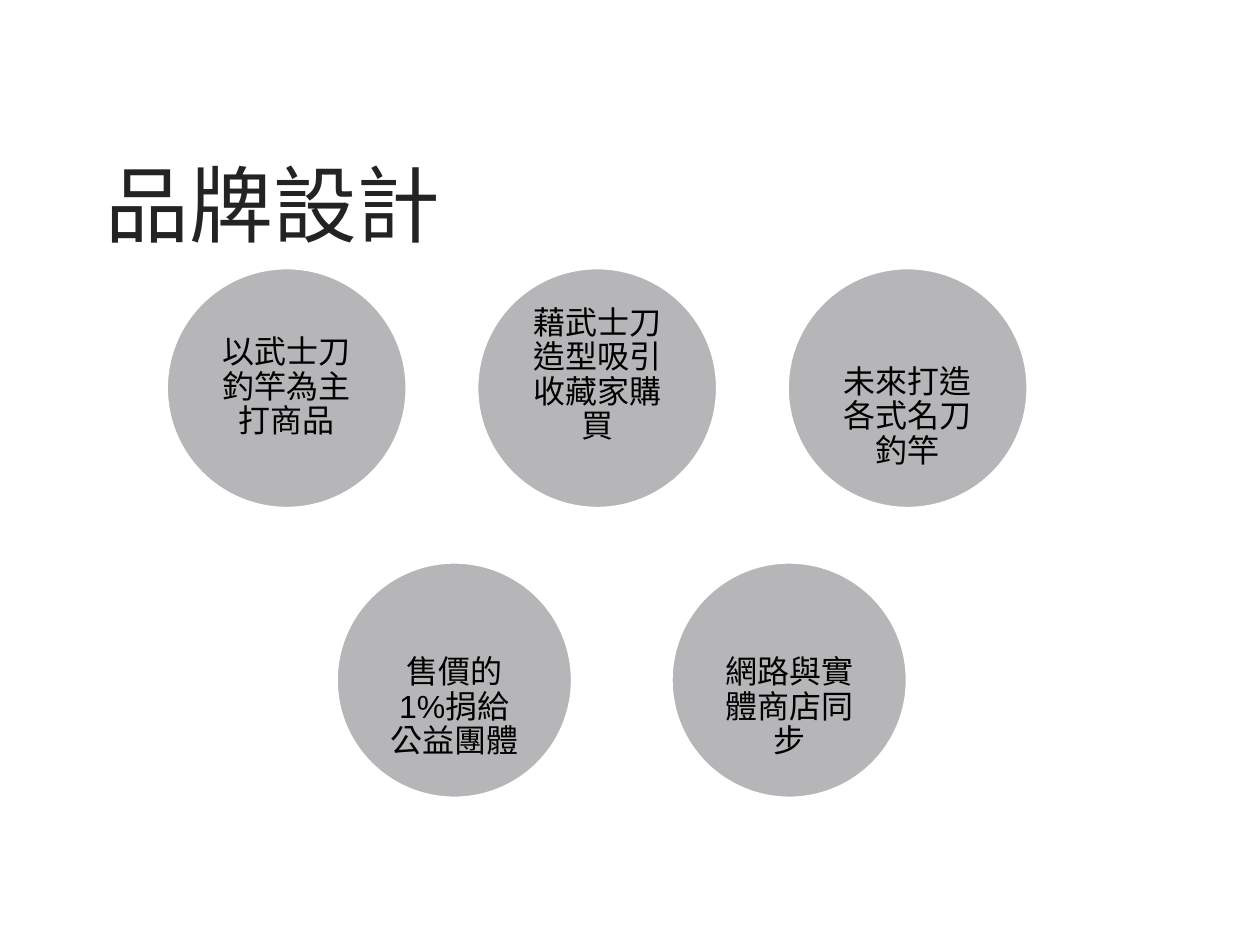
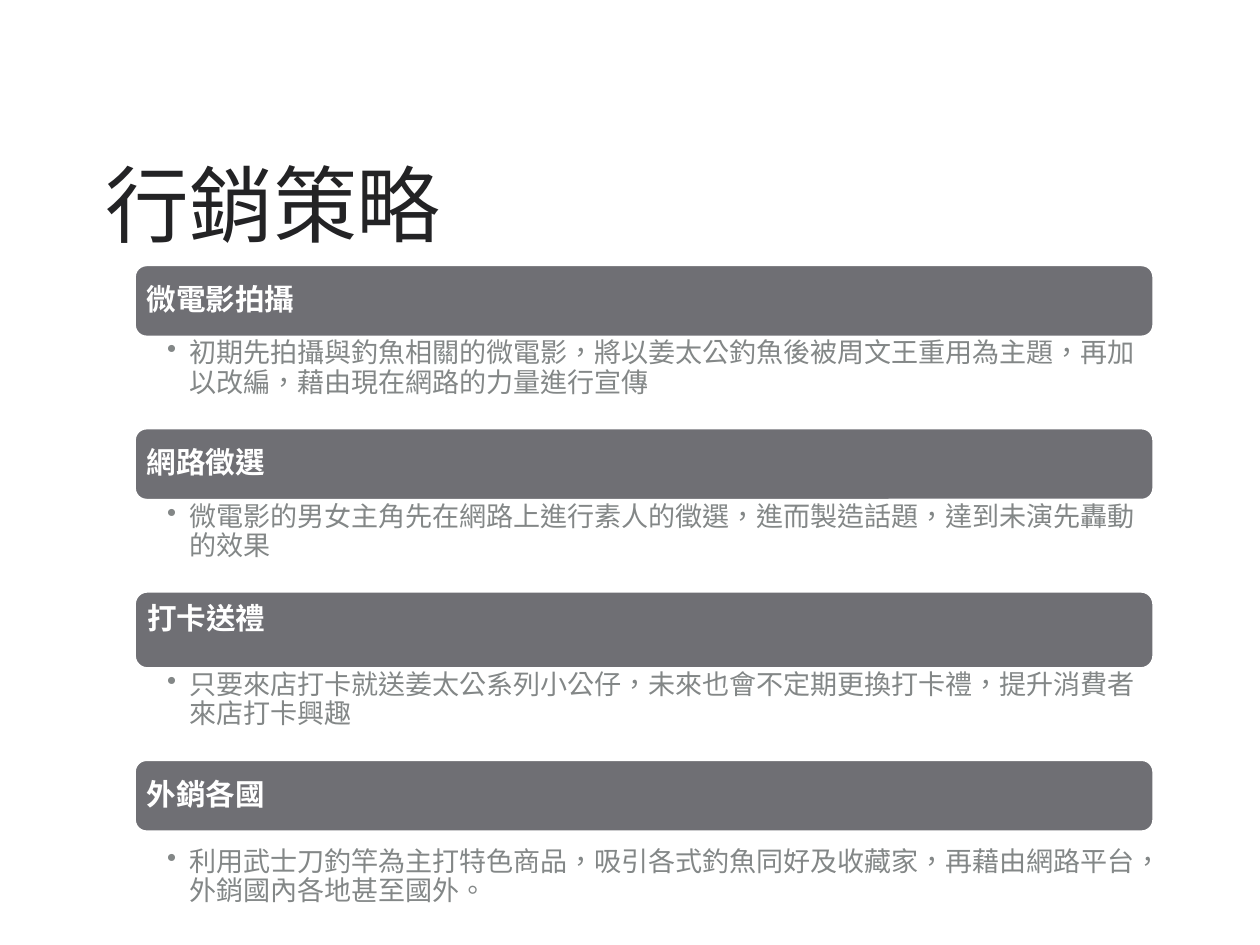
import pptx
import pptx.util
import pptx.dml.color
import pptx.enum.lang
import pptx.enum.shapes
import pptx.enum.text
import pptx.oxml
import pptx.oxml.ns
from dataclasses import dataclass
from pptx.util import Cm

Anchor = pptx.enum.text.MSO_ANCHOR
Align = pptx.enum.text.PP_ALIGN
Shape = pptx.enum.shapes.MSO_SHAPE


@dataclass(frozen=True)
class Theme:
    font: str = "Arial"
    title_color: str = "232325"
    grey: str = "6F6F74"
    white: str = "FFFFFF"
    black: str = "000000"
    detail_color: str = "838787"
    title_size: int = 68
    circle_size: int = 26
    heading_size: int = 24
    detail_size: int = 22


theme = Theme()


def write_text(shape, text, size, color, insets, anchor, align=Align.LEFT,
               bold=False, spacing=0.9, bullet=False):
    frame = shape.text_frame
    frame.text = text
    frame.word_wrap = True
    frame.vertical_anchor = anchor
    frame.margin_left, frame.margin_top, frame.margin_right, frame.margin_bottom = map(Cm, insets)
    paragraph = frame.paragraphs[0]
    paragraph.alignment = align
    paragraph.line_spacing = spacing
    if bullet:
        paragraph.level = 1
        properties = paragraph._p.get_or_add_pPr()
        properties.set("marL", str(Cm(0.63)))
        properties.set("indent", str(-Cm(0.63)))
        properties.append(pptx.oxml.parse_xml(
            f'<a:buChar {pptx.oxml.ns.nsdecls("a")} char="•"/>'))
    for run in paragraph.runs:
        run.font.name = theme.font
        run.font.size = pptx.util.Pt(size)
        run.font.bold = bold
        run.font.color.rgb = pptx.dml.color.RGBColor.from_string(color)
        run.font.language_id = pptx.enum.lang.MSO_LANGUAGE_ID.TRADITIONAL_CHINESE


def add_grey_shape(slide, kind, left, top, width, height):
    shape = slide.shapes.add_shape(kind, Cm(left), Cm(top), Cm(width), Cm(height))
    shape.shadow.inherit = False
    shape.fill.solid()
    shape.fill.fore_color.rgb = pptx.dml.color.RGBColor.from_string(theme.grey)
    shape.line.color.rgb = pptx.dml.color.RGBColor.from_string(theme.white)
    shape.line.width = pptx.util.Pt(2)
    return shape


presentation = pptx.Presentation()
presentation.slide_width = Cm(36.12)
presentation.slide_height = Cm(27.1)

# Slides with their titles
slides = []
for title in ("品牌設計", "行銷策略"):
    slide = presentation.slides.add_slide(presentation.slide_layouts[6])
    title_box = slide.shapes.add_textbox(Cm(2.67), Cm(3.73), Cm(30.71), Cm(3.71))
    write_text(title_box, title, theme.title_size, theme.title_color,
               (0.36, 0.18, 0.36, 0.18), Anchor.BOTTOM, spacing=1.0)
    slides.append(slide)
brand_slide, marketing_slide = slides

# Brand design: two rows of translucent circles (left, top, diameter, pitch, texts)
circle_rows = [
    (4.78, 7.69, 6.88, 8.9, [
        ("以武士刀釣竿為主打商品", Anchor.MIDDLE),
        ("藉武士刀造型吸引收藏家購買", Anchor.TOP),
        ("未來打造各式名刀釣竿", Anchor.BOTTOM),
    ]),
    (9.65, 16.13, 6.75, 9.6, [
        ("售價的1%捐給公益團體", Anchor.BOTTOM),
        ("網路與實體商店同步", Anchor.BOTTOM),
    ]),
]
for left, top, diameter, pitch, circles in circle_rows:
    for column, (text, anchor) in enumerate(circles):
        circle = add_grey_shape(brand_slide, Shape.OVAL, left + column * pitch,
                                top, diameter, diameter)
        color = circle.fill._xPr.find(".//" + pptx.oxml.ns.qn("a:srgbClr"))
        color.append(pptx.oxml.parse_xml(
            f'<a:alpha {pptx.oxml.ns.nsdecls("a")} val="50000"/>'))
        write_text(circle, text, theme.circle_size, theme.black,
                   (0.36, 0.1, 0.36, 0.1), anchor, Align.CENTER)

# Marketing strategy: stacked heading bars, each followed by its detail
# (heading, bar height, heading anchor, detail, detail anchor)
strategies = [
    ("微電影拍攝", 2.06, Anchor.MIDDLE,
     "初期先拍攝與釣魚相關的微電影，將以姜太公釣魚後被周文王重用為主題，再加以改編，藉由現在網路的力量進行宣傳",
     Anchor.TOP),
    ("網路徵選", 2.06, Anchor.MIDDLE,
     "微電影的男女主角先在網路上進行素人的徵選，進而製造話題，達到未演先轟動的效果",
     Anchor.TOP),
    ("打卡送禮", 2.21, Anchor.TOP,
     "只要來店打卡就送姜太公系列小公仔，未來也會不定期更換打卡禮，提升消費者來店打卡興趣",
     Anchor.TOP),
    ("外銷各國", 2.06, Anchor.MIDDLE,
     "利用武士刀釣竿為主打特色商品，吸引各式釣魚同好及收藏家，再藉由網路平台，外銷國內各地甚至國外。",
     Anchor.MIDDLE),
]
bar_left, bar_width, detail_height = 3.86, 29.21, 2.62
top = 7.6
for heading, bar_height, heading_anchor, detail, detail_anchor in strategies:
    bar = add_grey_shape(marketing_slide, Shape.ROUNDED_RECTANGLE,
                         bar_left, top, bar_width, bar_height)
    write_text(bar, heading, theme.heading_size, theme.white,
               (0.25, 0.25, 0.25, 0.25), heading_anchor, bold=True)
    top += bar_height
    detail_box = marketing_slide.shapes.add_textbox(
        Cm(bar_left), Cm(top), Cm(bar_width), Cm(detail_height))
    write_text(detail_box, detail, theme.detail_size, theme.detail_color,
               (0.93, 0.08, 0.43, 0.08), detail_anchor, bullet=True)
    top += detail_height

presentation.save("out.pptx")
